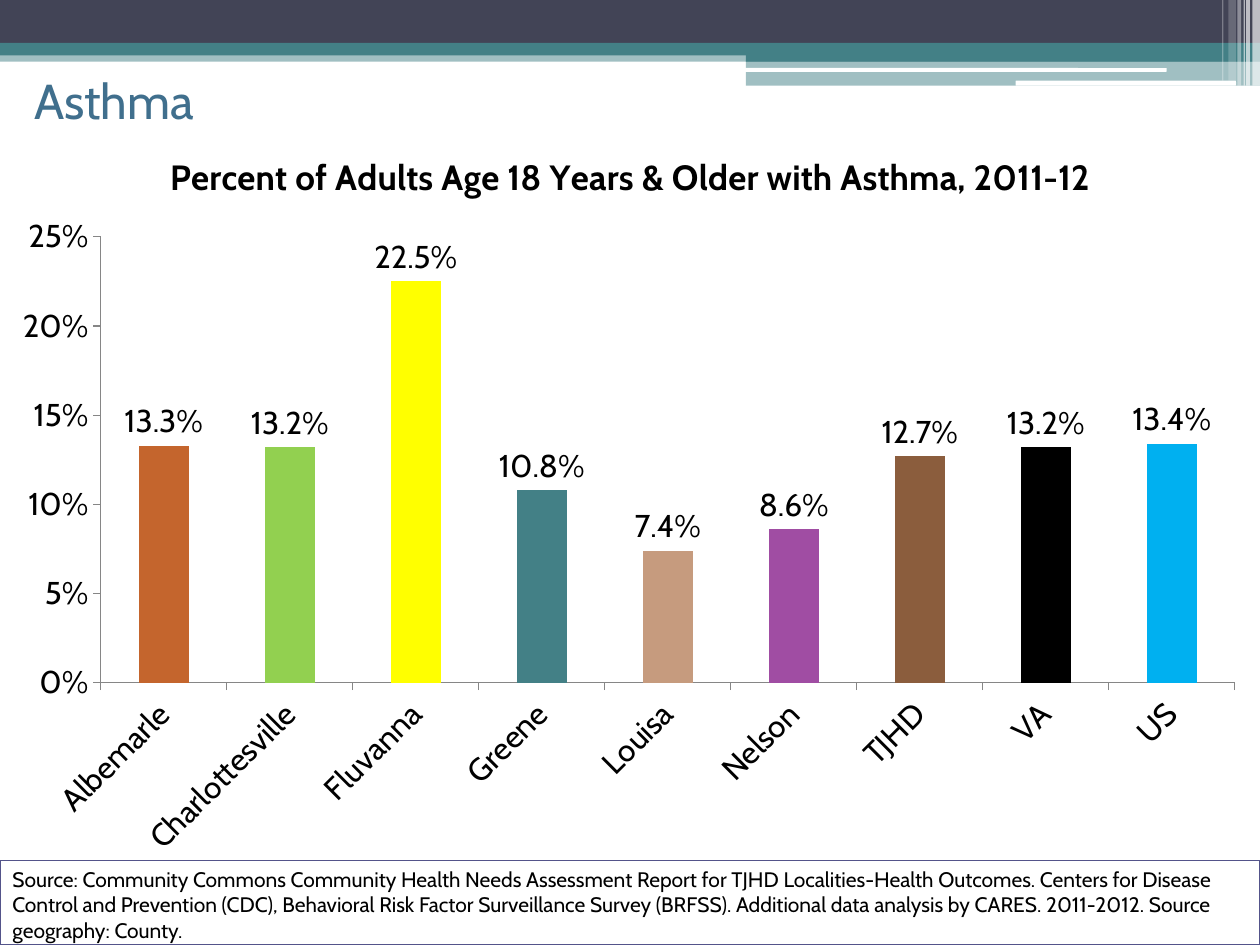
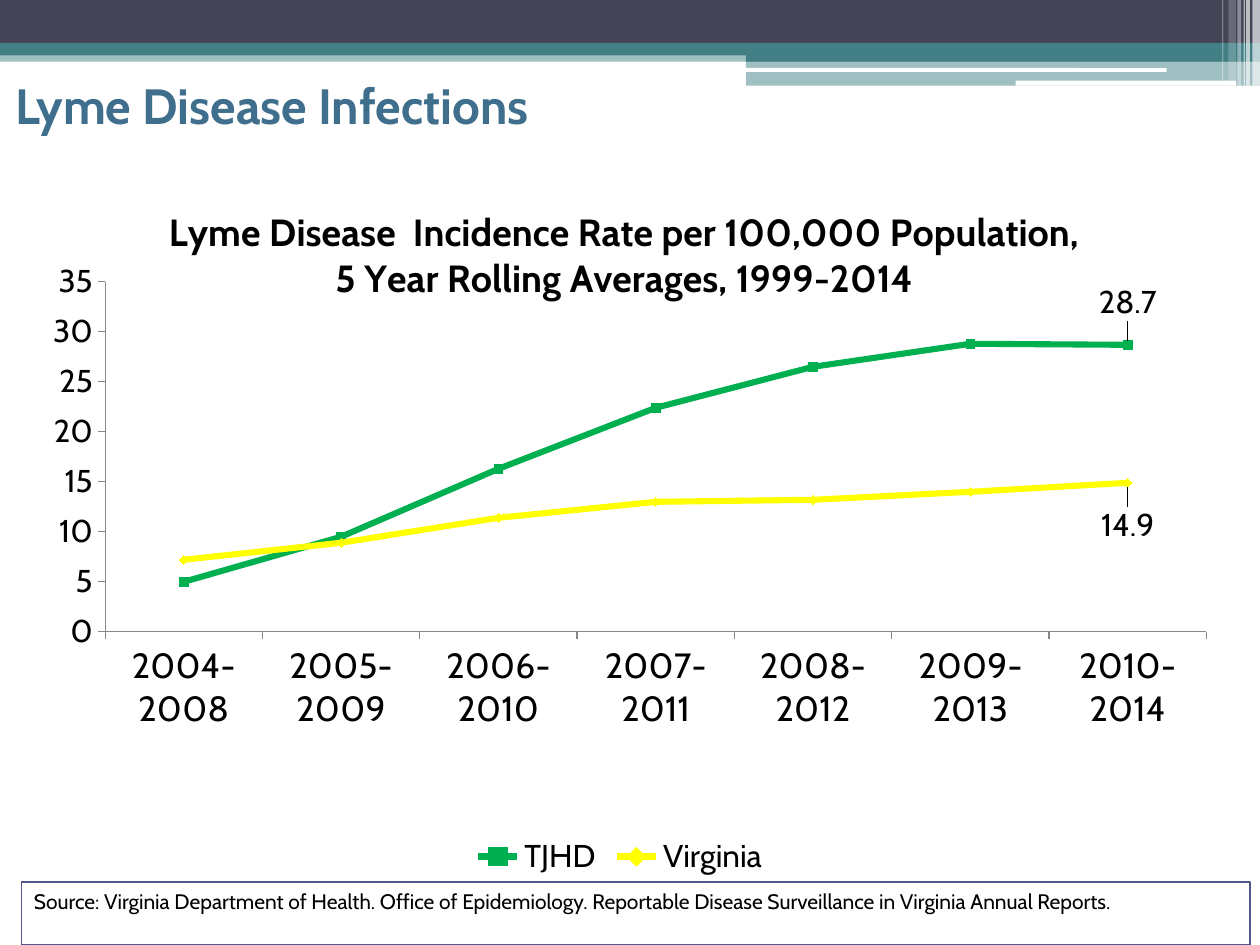
from lxml.etree import SubElement
from pptx import Presentation
from pptx.chart.data import CategoryChartData
from pptx.dml.color import RGBColor
from pptx.enum.chart import (XL_CHART_TYPE, XL_LABEL_POSITION, XL_LEGEND_POSITION,
                             XL_MARKER_STYLE, XL_TICK_MARK)
from pptx.enum.shapes import MSO_SHAPE
from pptx.enum.text import MSO_ANCHOR, MSO_AUTO_SIZE, PP_ALIGN
from pptx.oxml import parse_xml
from pptx.oxml.ns import nsdecls, qn
from pptx.util import Inches, Pt

FONT = "Cabin"
COLORS = {
    "navy": "424456", "teal": "438086", "white": "FFFFFF", "black": "000000",
    "title": "406F8D", "border": "53548A", "axis": "868686", "rust": "C4652D",
    "lime": "92D050", "yellow": "FFFF00", "tan": "C69B7E", "purple": "A04DA3",
    "brown": "8B5D3D", "sky": "00B0F0", "green": "00B050",
}
RECT, ROUND = MSO_SHAPE.RECTANGLE, MSO_SHAPE.ROUNDED_RECTANGLE
BANDS = [
    (RECT, 0, 0.4, 10, 0.09, "teal", 50),
    (RECT, 0, 0, 10, 0.34, "navy", 100),
    (RECT, 0, 0.34, 10, 0.1, "teal", 100),
    (RECT, 5.92, 0.39, 4.08, 0.1, "teal", 100),
    (RECT, 5.92, 0.48, 4.08, 0.2, "teal", 50),
    (ROUND, 5.91, 0.54, 3.35, 0.03, "white", 100),
    (ROUND, 8.06, 0.64, 1.75, 0.04, "white", 100),
] + [(RECT, x, 0, w, h, "white", alpha) for x, w, h, alpha in [
    (9.94, 0.06, 0.68, 65), (9.89, 0.03, 0.68, 65), (9.87, 0.01, 0.68, 60),
    (9.82, 0.03, 0.68, 40), (9.75, 0.06, 0.64, 20), (9.7, 0.01, 0.64, 30)]]


def rgb(name):
    return RGBColor.from_string(COLORS[name])


def set_font(font, size, color="black", bold=False):
    font.name, font.size, font.bold = FONT, Pt(size), bold
    font.color.rgb = rgb(color)


def add_box(slide, kind, x, y, w, h, color):
    sp = slide.shapes.add_shape(kind, Inches(x), Inches(y), Inches(w), Inches(h))
    sp.shadow.inherit = False
    sp.fill.solid()
    sp.fill.fore_color.rgb = rgb(color)
    sp.line.fill.background()
    return sp


def add_master_bands(prs, slide):
    tree = prs.slide_master.shapes.element
    for i, (kind, x, y, w, h, color, alpha) in enumerate(BANDS):
        sp = add_box(slide, kind, x, y, w, h, color)
        if alpha < 100:
            fill = sp.element.spPr.find(qn("a:solidFill"))
            SubElement(fill[0], qn("a:alpha")).set("val", str(alpha * 1000))
        sp.element.xpath(".//p:cNvPr")[0].set("id", str(100 + i))
        tree.insert(2 + i, sp.element)


def set_title(slide, text, x, y, w, h, size, bold=False):
    sp = slide.shapes.title
    sp.left, sp.top, sp.width, sp.height = map(Inches, (x, y, w, h))
    tf = sp.text_frame
    tf.text = text
    tf.auto_size = MSO_AUTO_SIZE.NONE
    tf.vertical_anchor = MSO_ANCHOR.MIDDLE
    p = tf.paragraphs[0]
    p.alignment = PP_ALIGN.LEFT
    set_font(p.runs[0].font, size, "title", bold)


def add_source(slide, text, x, y, w, h):
    sp = add_box(slide, RECT, x, y, w, h, "white")
    sp.line.color.rgb = rgb("border")
    sp.line.width = Pt(0.75)
    tf = sp.text_frame
    tf.text = text
    tf.word_wrap = True
    tf.vertical_anchor = MSO_ANCHOR.TOP
    p = tf.paragraphs[0]
    p.alignment = PP_ALIGN.LEFT
    set_font(p.runs[0].font, 12)


def make_layout(x, y, w=None, h=None):
    xml = f"<c:layout {nsdecls('c')}><c:manualLayout>"
    if w:
        xml += '<c:layoutTarget val="inner"/>'
    xml += '<c:xMode val="edge"/><c:yMode val="edge"/>'
    for tag, value in zip("xywh", (x, y, w, h)):
        if value is not None:
            xml += f'<c:{tag} val="{value}"/>'
    return parse_xml(xml + "</c:manualLayout></c:layout>")


def place(parent, layout, index):
    for old in parent.findall(qn("c:layout")):
        parent.remove(old)
    parent.insert(index, layout)


def add_chart(slide, kind, box, cats, series, number_format="General"):
    data = CategoryChartData(number_format=number_format)
    data.categories = cats
    for name, values in series:
        data.add_series(name, values)
    chart = slide.shapes.add_chart(kind, *map(Inches, box), data).chart
    set_font(chart.font, 18)
    chart.has_legend = False
    return chart


def set_chart_title(chart, lines, size, x, y):
    tf = chart.chart_title.text_frame
    tf.text = lines[0]
    for line in lines[1:]:
        tf.add_paragraph().text = line
    for p in tf.paragraphs:
        p.alignment = PP_ALIGN.CENTER
        set_font(p.runs[0].font, size, bold=True)
    chart.chart_title.include_in_layout = False
    place(chart.chart_title.element if hasattr(chart.chart_title, "element")
          else chart.element.xpath(".//c:chart/c:title")[0], make_layout(x, y), 1)


def set_axes(chart, maximum, step, number_format, cat_size, plot):
    cat, val = chart.category_axis, chart.value_axis
    for axis, size in ((cat, cat_size), (val, 18)):
        axis.has_major_gridlines = False
        axis.major_tick_mark = XL_TICK_MARK.OUTSIDE
        axis.minor_tick_mark = XL_TICK_MARK.NONE
        axis.format.line.color.rgb = rgb("axis")
        set_font(axis.tick_labels.font, size)
    val.minimum_scale, val.maximum_scale, val.major_unit = 0, maximum, step
    val.tick_labels.number_format = number_format
    val.tick_labels.number_format_is_linked = False
    place(chart._chartSpace.chart.plotArea, make_layout(*plot), 0)


def add_asthma_chart(slide):
    title = "Percent of Adults Age 18 Years & Older with Asthma, 2011-12"
    bars = [
        ("Albemarle", 0.133, "rust"), ("Charlottesville", 0.132, "lime"),
        ("Fluvanna", 0.225, "yellow"), ("Greene", 0.108, "teal"),
        ("Louisa", 0.074, "tan"), ("Nelson", 0.086, "purple"),
        ("TJHD", 0.127, "brown"), ("VA", 0.132, "black"), ("US", 0.134, "sky"),
    ]
    cats, values, colors = zip(*bars)
    chart = add_chart(slide, XL_CHART_TYPE.COLUMN_CLUSTERED, (0, 0.92, 10, 6),
                      cats, [(title, values)], "0.0%")
    set_chart_title(chart, [title], 20, 0.13, 0.04)
    set_axes(chart, 0.25, 0.05, "0%", 18, (0.08, 0.16, 0.9, 0.59))
    body = chart.category_axis.tick_labels.font._element.getparent().getparent().getparent()
    body.find(qn("a:bodyPr")).set("rot", "-2700000")
    plot = chart.plots[0]
    plot.gap_width = 150
    plot.vary_by_categories = False
    for i, color in enumerate(colors):
        fill = plot.series[0].points[i].format.fill
        fill.solid()
        fill.fore_color.rgb = rgb(color)
    plot.has_data_labels = True
    labels = plot.data_labels
    labels.show_value = True
    labels.position = XL_LABEL_POSITION.OUTSIDE_END
    labels.number_format = "0.0%"
    labels.number_format_is_linked = False
    set_font(labels.font, 18)


def label_last_point(series, index, position, shift):
    label = series.points[index].data_label
    label.position = position
    set_font(label.font, 18)
    layout = parse_xml(f'<c:layout {nsdecls("c")}><c:manualLayout><c:x val="0"/>'
                       f'<c:y val="{shift}"/></c:manualLayout></c:layout>')
    place(series._element.xpath(".//c:dLbl")[0], layout, 1)


def add_lyme_chart(slide):
    cats = [f"{year}-{year + 4}" for year in range(2004, 2011)]
    lines = [("TJHD", (5.0, 9.5, 16.3, 22.4, 26.5, 28.8, 28.7)),
             ("Virginia", (7.2, 8.9, 11.4, 13.0, 13.2, 14.0, 14.9))]
    styles = [("green", XL_MARKER_STYLE.SQUARE, XL_LABEL_POSITION.ABOVE, -0.02),
              ("yellow", XL_MARKER_STYLE.DIAMOND, XL_LABEL_POSITION.BELOW, 0.02)]
    chart = add_chart(slide, XL_CHART_TYPE.LINE_MARKERS, (0.17, 1.33, 9.5, 5.67),
                      cats, lines)
    set_chart_title(chart, ["Lyme Disease  Incidence Rate per 100,000 Population,",
                            "5 Year Rolling Averages, 1999-2014"], 21.6, 0.12, 0.05)
    set_axes(chart, 35, 5, "0", 20, (0.07, 0.16, 0.92, 0.49))
    chart.has_legend = True
    chart.legend.position = XL_LEGEND_POSITION.BOTTOM
    chart.legend.include_in_layout = False
    set_font(chart.legend.font, 18)
    for series, (color, marker, position, shift) in zip(chart.plots[0].series, styles):
        series.smooth = False
        series.format.line.color.rgb = rgb(color)
        series.format.line.width = Pt(3.5)
        series.marker.style, series.marker.size = marker, 5
        series.marker.format.fill.solid()
        series.marker.format.fill.fore_color.rgb = rgb(color)
        series.marker.format.line.color.rgb = rgb(color)
        label_last_point(series, len(cats) - 1, position, shift)


def main():
    prs = Presentation()
    prs.slide_width, prs.slide_height = Inches(10), Inches(7.5)
    asthma, lyme = (prs.slides.add_slide(prs.slide_layouts[5]) for _ in range(2))
    add_master_bands(prs, asthma)

    set_title(asthma, "Asthma", 0.17, 0.5, 1.75, 0.58, 28)
    add_source(asthma, "Source: Community Commons Community Health Needs Assessment "
               "Report for TJHD Localities-Health Outcomes. Centers for Disease Control "
               "and Prevention (CDC), Behavioral Risk Factor Surveillance Survey (BRFSS). "
               "Additional data analysis by CARES. 2011-2012. Source geography: County.",
               0, 6.83, 10, 0.67)
    add_asthma_chart(asthma)

    set_title(lyme, "Lyme Disease Infections", 0.02, 0.33, 8.5, 1, 28.3, True)
    add_source(lyme, "Source: Virginia Department of Health. Office of Epidemiology. "
               "Reportable Disease Surveillance in Virginia Annual Reports.",
               0.17, 7, 9.75, 0.5)
    add_lyme_chart(lyme)
    prs.save("out.pptx")


if __name__ == "__main__":
    main()
